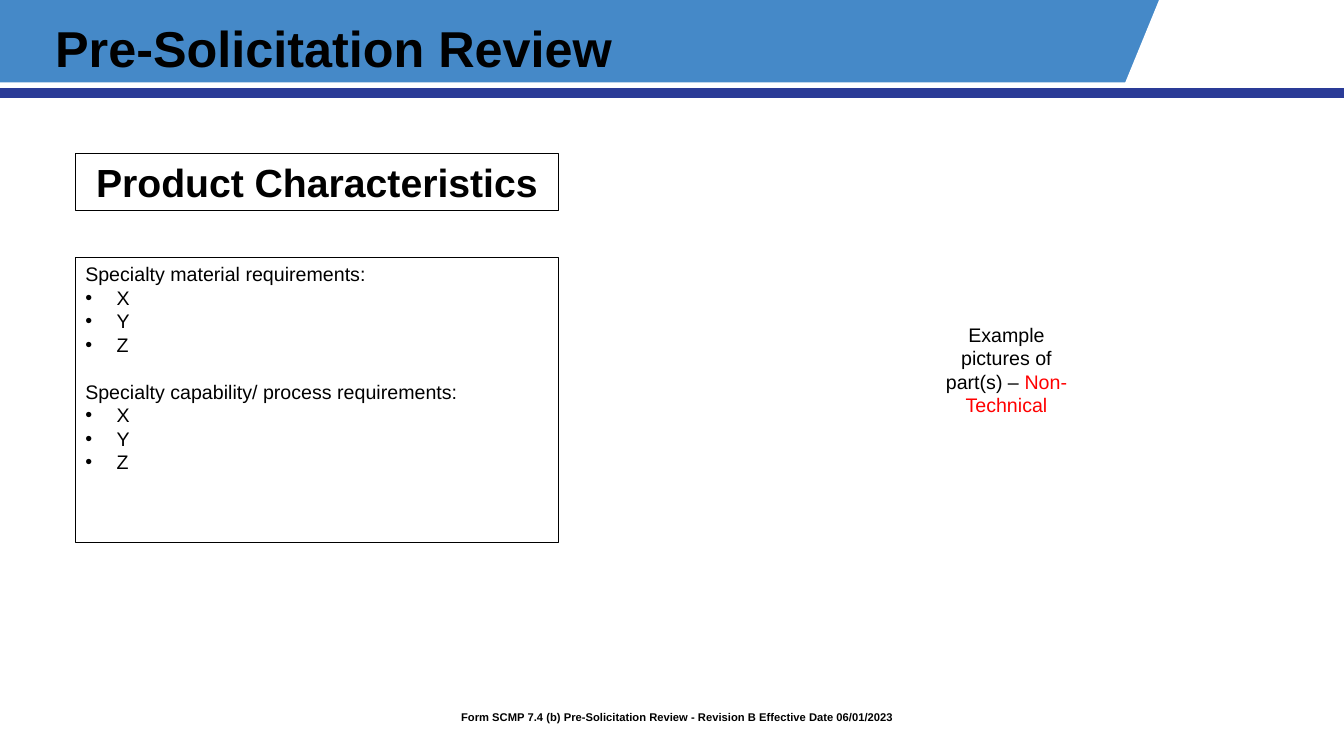
from dataclasses import dataclass

from lxml import etree
from pptx import Presentation
from pptx.dml.color import RGBColor
from pptx.enum import shapes, text
from pptx.oxml import ns
from pptx.util import Cm, Pt


@dataclass(frozen=True)
class Theme:
    font: str = "Arial"
    black: str = "000000"
    white: str = "FFFFFF"
    red: str = "FF0000"
    banner: str = "4589C8"
    stripe: str = "2A3B97"
    title: int = 36
    heading: int = 28
    body: int = 14
    footer: int = 8


theme = Theme()
LEFT, CENTER = text.PP_ALIGN.LEFT, text.PP_ALIGN.CENTER

deck = Presentation()
deck.slide_width, deck.slide_height = Cm(33.87), Cm(19.05)
page = deck.slides.add_slide(deck.slide_layouts[6])


def add_box(left, top, width, height, fill=None, outlined=False):
    """Add a rectangle with top-anchored, wrapping text."""
    box = page.shapes.add_shape(
        shapes.MSO_SHAPE.RECTANGLE, Cm(left), Cm(top), Cm(width), Cm(height))
    box.shadow.inherit = False
    if fill:
        box.fill.solid()
        box.fill.fore_color.rgb = RGBColor.from_string(fill)
    else:
        box.fill.background()
    if outlined:
        box.line.color.rgb = RGBColor.from_string(theme.black)
        box.line.width = Pt(0.75)
    else:
        box.line.fill.background()
    box.text_frame.word_wrap = True
    box.text_frame.vertical_anchor = text.MSO_ANCHOR.TOP
    return box


def write(para, words, size, bold=False, color=theme.black, align=LEFT):
    para.alignment = align
    span = para.add_run()
    span.text = words
    span.font.name = theme.font
    span.font.size = Pt(size)
    span.font.bold = bold
    span.font.color.rgb = RGBColor.from_string(color)


# Banner with a slanted right end
add_box(0, 0, 33.5, 2.08, fill=theme.banner)
outline = page.shapes.build_freeform(Cm(29.21), 0)
outline.add_line_segments(
    [(Cm(33.87), 0), (Cm(33.87), Cm(2.22)), (Cm(28.3), Cm(2.22))], close=True)
slant = outline.convert_to_shape()
slant.shadow.inherit = False
slant.fill.solid()
slant.fill.fore_color.rgb = RGBColor.from_string(theme.white)
slant.line.fill.background()
add_box(0, 2.22, 33.87, 0.25, fill=theme.stripe)

# Requirements
requirements = add_box(1.9, 6.48, 12.17, 7.19, outlined=True).text_frame
groups = {
    "Specialty material requirements:": ["X", "Y", "Z"],
    "Specialty capability/ process requirements:": ["X", "Y", "Z"],
}
for number, (label, items) in enumerate(groups.items()):
    para = requirements.add_paragraph() if number else requirements.paragraphs[0]
    if number:
        para.space_before = Pt(16.8)
    write(para, label, theme.body)
    for item in items:
        para = requirements.add_paragraph()
        properties = para._p.get_or_add_pPr()
        properties.set("marL", str(Cm(0.79)))
        properties.set("indent", str(-Cm(0.79)))
        bullet_font = etree.SubElement(properties, ns.qn("a:buFont"))
        bullet_font.set("typeface", theme.font)
        etree.SubElement(properties, ns.qn("a:buChar")).set("char", "•")
        write(para, item, theme.body)

# Title
title = add_box(1.14, 0.08, 18.06, 2.41).text_frame
title.vertical_anchor = text.MSO_ANCHOR.MIDDLE
title.paragraphs[0].line_spacing = 0.9
write(title.paragraphs[0], "Pre-Solicitation Review", theme.title, bold=True)

# Part examples
example = add_box(23.5, 8, 3.73, 2.64).text_frame.paragraphs[0]
write(example, "Example pictures of part(s) – ", theme.body, align=CENTER)
write(example, "Non-Technical", theme.body, color=theme.red, align=CENTER)

# Section heading
heading = add_box(1.9, 3.86, 12.17, 1.45, outlined=True).text_frame.paragraphs[0]
write(heading, "Product Characteristics", theme.heading, bold=True, align=CENTER)

# Footer
footer = add_box(10.74, 17.81, 12.4, 0.97).text_frame.paragraphs[0]
footer_properties = footer._p.get_or_add_pPr()
footer_properties.set("marL", str(Cm(1.27)))
footer_properties.set("indent", str(-Cm(0.64)))
footer.line_spacing = 0.9
write(footer,
      "Form SCMP 7.4 (b) Pre-Solicitation Review - Revision B Effective Date 06/01/2023",
      theme.footer, bold=True)

deck.save("out.pptx")
